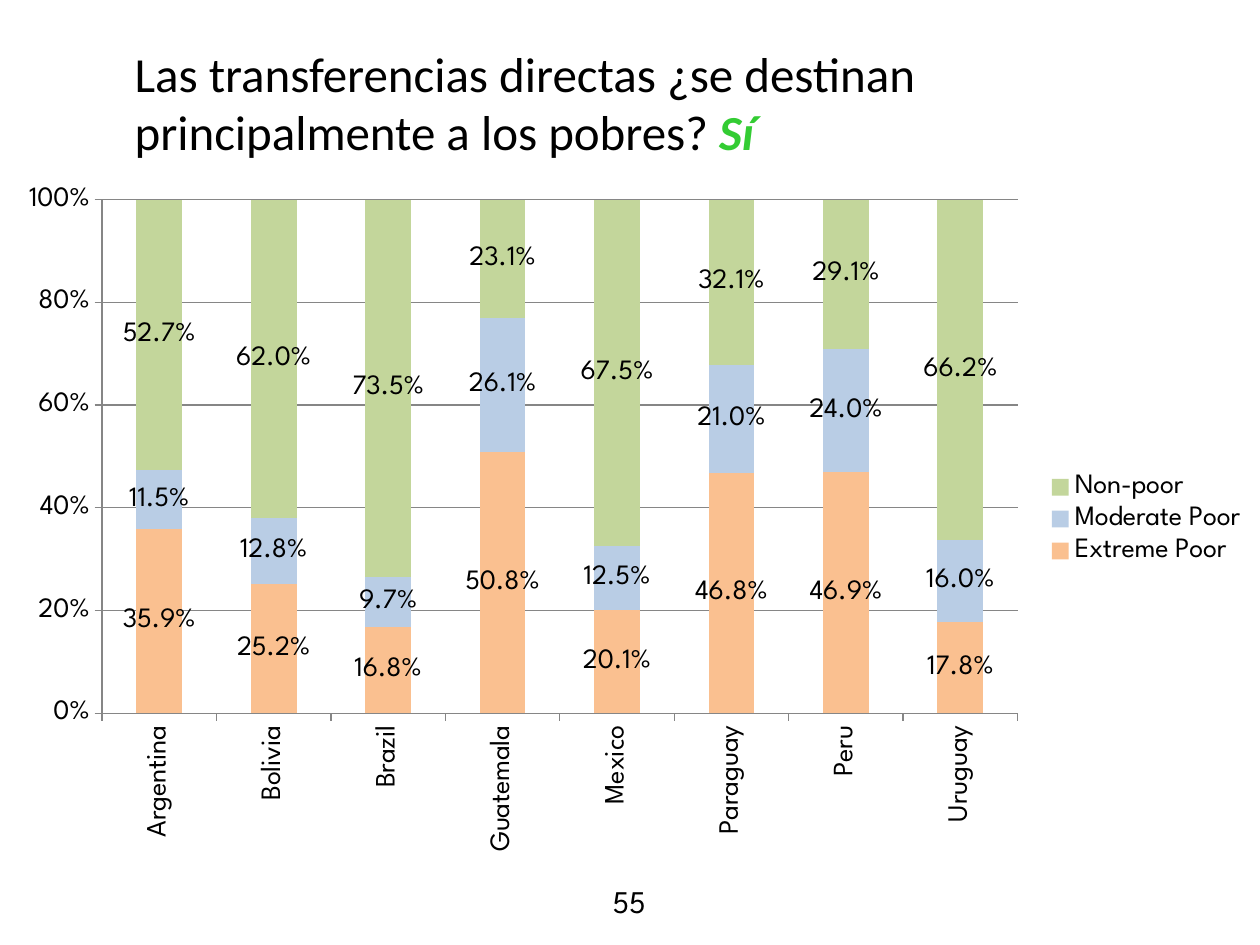
import pptx
import pptx.chart.data
import pptx.dml.color
import pptx.enum.chart
import pptx.enum.text
import pptx.util
from pptx.util import Cm
from dataclasses import dataclass


@dataclass(frozen=True)
class Theme:
    title_font: str = "Calibri"
    body_font: str = "League Spartan"
    title_size: int = 28
    chart_size: int = 16
    number_size: int = 18
    text: str = "000000"
    accent: str = "33CC33"
    axis: str = "868686"
    extreme: str = "FAC090"
    moderate: str = "B9CDE5"
    non_poor: str = "C3D69B"


def set_font(font, name, size, color):
    font.name = name
    font.size = pptx.util.Pt(size)
    font.color.rgb = pptx.dml.color.RGBColor.from_string(color)


theme = Theme()
presentation = pptx.Presentation()
presentation.slide_width = Cm(25.4)
presentation.slide_height = Cm(19.05)
slide = presentation.slides.add_slide(presentation.slide_layouts[5])

title = slide.shapes.title
title.left, title.top, title.width, title.height = Cm(1.19), Cm(0.74), Cm(22.86), Cm(16.08)
title.text_frame.vertical_anchor = pptx.enum.text.MSO_ANCHOR.TOP
title.text_frame.auto_size = pptx.enum.text.MSO_AUTO_SIZE.NONE
paragraph = title.text_frame.paragraphs[0]
paragraph.alignment = pptx.enum.text.PP_ALIGN.LEFT
properties = paragraph._p.get_or_add_pPr()
properties.set("marL", str(Cm(1.27)))
properties.set("indent", "0")
question = paragraph.add_run()
question.text = "Las transferencias directas ¿se destinan principalmente a los pobres? "
set_font(question.font, theme.title_font, theme.title_size, theme.text)
answer = paragraph.add_run()
answer.text = "Sí"
set_font(answer.font, theme.title_font, theme.title_size, theme.accent)
answer.font.bold = True
answer.font.italic = True

series_rows = [
    ("Extreme Poor", theme.extreme, (0.359, 0.252, 0.168, 0.508, 0.201, 0.468, 0.469, 0.178)),
    ("Moderate Poor", theme.moderate, (0.115, 0.128, 0.097, 0.261, 0.125, 0.21, 0.24, 0.16)),
    ("Non-poor", theme.non_poor, (0.527, 0.62, 0.735, 0.231, 0.675, 0.321, 0.291, 0.662)),
]
chart_data = pptx.chart.data.CategoryChartData(number_format="0.0%")
chart_data.categories = [
    "Argentina", "Bolivia", "Brazil", "Guatemala", "Mexico", "Paraguay", "Peru", "Uruguay",
]
for name, color, values in series_rows:
    chart_data.add_series(name, values)

chart = slide.shapes.add_chart(
    pptx.enum.chart.XL_CHART_TYPE.COLUMN_STACKED_100,
    Cm(0.08), Cm(3.48), Cm(25.32), Cm(13.97), chart_data,
).chart
set_font(chart.font, theme.body_font, theme.chart_size, theme.text)
chart.has_title = False
chart.has_legend = True
chart.legend.position = pptx.enum.chart.XL_LEGEND_POSITION.RIGHT
chart.legend.include_in_layout = False

plot = chart.plots[0]
plot.gap_width = 150
plot.overlap = 100
plot.vary_by_categories = False
for series, (name, color, values) in zip(plot.series, series_rows):
    series.format.fill.solid()
    series.format.fill.fore_color.rgb = pptx.dml.color.RGBColor.from_string(color)
    labels = series.data_labels
    labels.show_value = True
    labels.number_format = "0.0%"
    labels.number_format_is_linked = False
    labels.position = pptx.enum.chart.XL_LABEL_POSITION.CENTER
    set_font(labels.font, theme.body_font, theme.chart_size, theme.text)

value_axis = chart.value_axis
value_axis.minimum_scale = 0
value_axis.maximum_scale = 1
value_axis.major_unit = 0.2
value_axis.has_major_gridlines = True
value_axis.tick_labels.number_format = "0%"
value_axis.tick_labels.number_format_is_linked = False
category_axis = chart.category_axis
for axis in (value_axis, category_axis):
    axis.major_tick_mark = pptx.enum.chart.XL_TICK_MARK.OUTSIDE
    set_font(axis.tick_labels.font, theme.body_font, theme.chart_size, theme.text)
for line in (value_axis.format.line, category_axis.format.line, value_axis.major_gridlines.format.line):
    line.color.rgb = pptx.dml.color.RGBColor.from_string(theme.axis)
    line.width = pptx.util.Pt(0.75)
category_text = category_axis._element.find(pptx.oxml.ns.qn("c:txPr"))
category_text.find(pptx.oxml.ns.qn("a:bodyPr")).set("rot", "-5400000")

number_box = slide.shapes.add_textbox(Cm(10.69), Cm(17.65), Cm(3.99), Cm(1.02))
number_box.text_frame.word_wrap = True
number_box.text_frame.text = "55"
number_paragraph = number_box.text_frame.paragraphs[0]
number_paragraph.alignment = pptx.enum.text.PP_ALIGN.CENTER
set_font(number_paragraph.runs[0].font, theme.body_font, theme.number_size, theme.text)

presentation.save("out.pptx")
